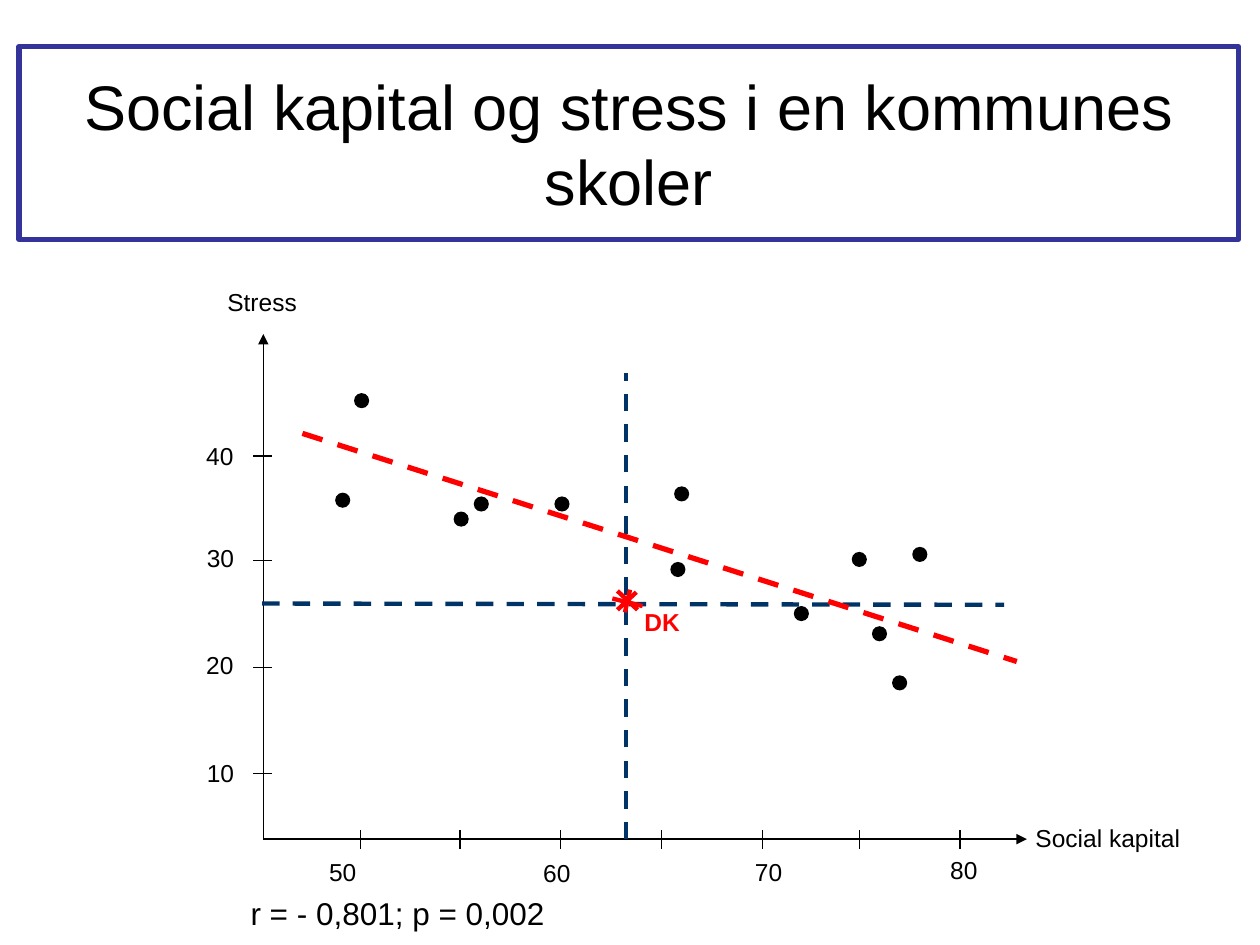
from lxml import etree
from pptx import Presentation
from pptx.dml.color import RGBColor
from pptx.enum.dml import MSO_LINE
from pptx.enum.shapes import MSO_CONNECTOR, MSO_SHAPE
from pptx.enum.text import MSO_ANCHOR, PP_ALIGN
from pptx.oxml.ns import qn
from pptx.util import Pt

LINE = MSO_CONNECTOR.STRAIGHT
DASH = MSO_LINE.DASH
LEFT, MID = PP_ALIGN.LEFT, PP_ALIGN.CENTER
PX = 9144  # EMU per px, 100 px to the inch
COLORS = {"ink": "000000", "frame": "333399", "mean": "003366", "trend": "FF0000"}

TITLE = "Social kapital og stress i en kommunes skoler"
FRAME = (15, 37, 968, 153)
AXIS_X, AXIS_Y = 209, 666
X_TICKS = [286, 365, 445, 525, 605, 682, 762]
Y_TICKS = [362, 445, 530, 614]
TICK = 15
DOT = 12
DOTS = [  # centres
    (272, 397), (287, 318), (366, 412), (714, 542), (541, 392), (682, 444),
    (382, 400), (636, 487), (446, 400), (538, 452), (698, 503), (730, 440),
]
LABELS = [  # text, left, top, width
    ("Stress", 104, 223, 208),
    ("40", 150, 345, 49), ("30", 148, 426, 54),
    ("20", 152, 511, 45), ("10", 153, 597, 44),
    ("50", 249, 675, 46), ("60", 419, 676, 46),
    ("70", 587, 675, 46), ("80", 742, 674, 46),
]
MEANS = [(497, 666, 497, 296), (208, 479, 797, 480)]
STAR = [(490, 469, 506, 484), (505, 470, 490, 484),
        (486, 475, 510, 481), (500, 468, 496, 486)]
TREND = (240, 344, 807, 525)


def rgb(name):
    return RGBColor.from_string(COLORS[name])


def scale(*sizes):
    return [size * PX for size in sizes]


def write(shape, text, size=14, color="ink", bold=False, align=MID,
          wrap=True, anchor=MSO_ANCHOR.TOP):
    frame = shape.text_frame
    frame.word_wrap = wrap
    frame.vertical_anchor = anchor
    para = frame.paragraphs[0]
    para.alignment = align
    run = para.add_run()
    run.text = text
    font = run.font
    font.name, font.size, font.bold = "Arial", Pt(size), bold
    font.color.rgb = rgb(color)


def label(shapes, text, left, top, width, height=33, **style):
    write(shapes.add_textbox(*scale(left, top, width, height)), text, **style)


def draw(shapes, ends, color="ink", width=0.75, dash=None, arrow=False):
    """Draw a straight line, with an arrowhead at its end if asked."""
    line = shapes.add_connector(LINE, *scale(*ends))
    line.line.color.rgb = rgb(color)
    line.line.width = Pt(width)
    if dash:
        line.line.dash_style = dash
    if arrow:
        etree.SubElement(line.line._get_or_add_ln(), qn("a:tailEnd"), type="triangle")
    etree.SubElement(line._element.spPr, qn("a:effectLst"))


def main():
    deck = Presentation()
    deck.slide_width, deck.slide_height = scale(1000, 750)
    shapes = deck.slides.add_slide(deck.slide_layouts[6]).shapes

    box = shapes.add_shape(MSO_SHAPE.RECTANGLE, *scale(*FRAME))
    box.shadow.inherit = False
    box.fill.background()
    box.line.color.rgb = rgb("frame")
    box.line.width = Pt(3)
    write(box, TITLE, size=36, anchor=MSO_ANCHOR.MIDDLE)

    draw(shapes, (AXIS_X, AXIS_Y, AXIS_X, 265), arrow=True)
    draw(shapes, (AXIS_X, AXIS_Y, 815, AXIS_Y), arrow=True)
    for y in Y_TICKS:
        draw(shapes, (AXIS_X - 8, y, AXIS_X - 8 + TICK, y))
    for x in X_TICKS:
        draw(shapes, (x, AXIS_Y - 7, x, AXIS_Y - 7 + TICK))
    for text, *place in LABELS:
        label(shapes, text, *place)
    label(shapes, "Social kapital", 812, 648, 136, align=LEFT)

    for ends in MEANS:
        draw(shapes, ends, color="mean", width=2.5, dash=DASH)
    for x, y in DOTS:
        dot = shapes.add_shape(MSO_SHAPE.OVAL,
                               *scale(x - DOT // 2, y - DOT // 2, DOT, DOT))
        dot.shadow.inherit = False
        dot.fill.solid()
        dot.fill.fore_color.rgb = rgb("ink")
        dot.line.fill.background()

    label(shapes, "DK", 496, 477, 59, color="trend", bold=True)
    star = shapes.add_group_shape()
    for ends in STAR:
        draw(star.shapes, ends, color="trend", width=2.5)
    draw(shapes, TREND, color="trend", width=3, dash=DASH)
    label(shapes, "r = - 0,801; p = 0,002", 189, 705, 256, 40,
          size=18, align=LEFT, wrap=False)
    deck.save("out.pptx")


if __name__ == "__main__":
    main()
